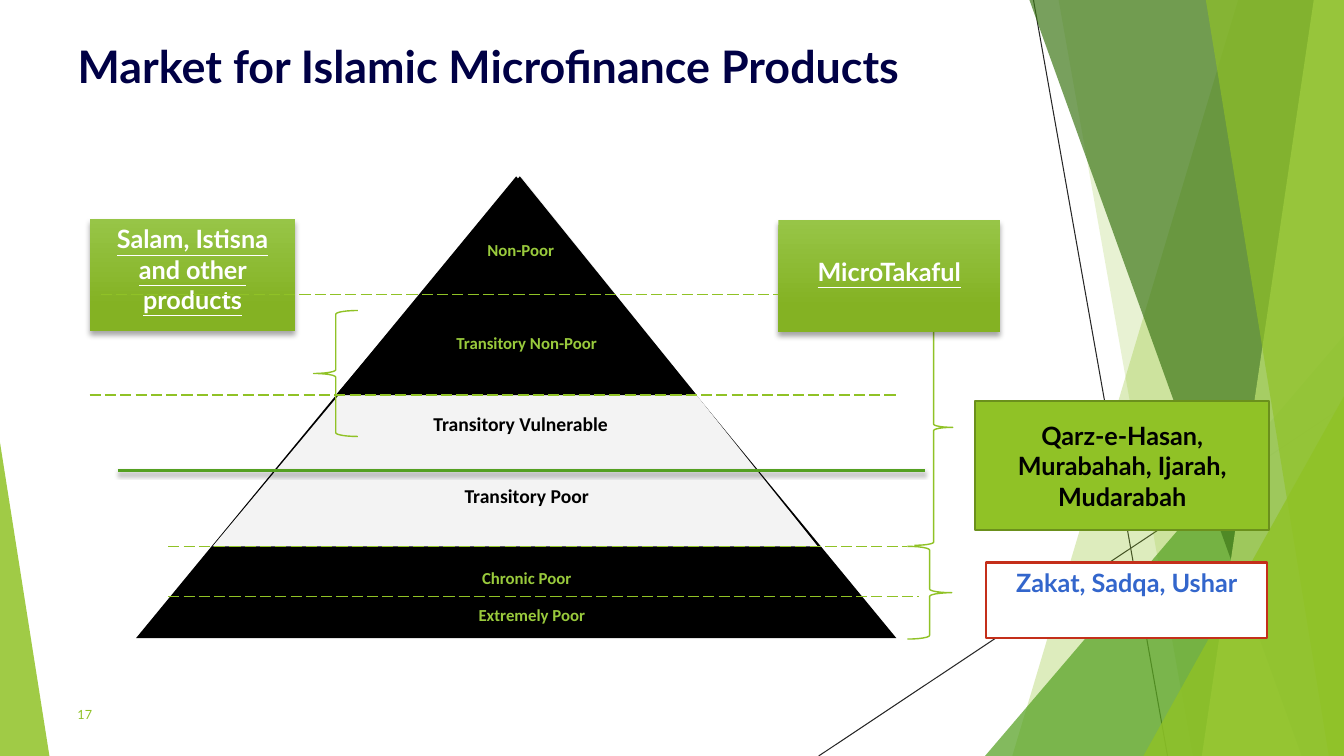
from pptx import Presentation
from pptx.dml.color import RGBColor
from pptx.enum.dml import MSO_LINE
from pptx.enum.shapes import MSO_CONNECTOR, MSO_SHAPE
from pptx.enum.text import MSO_ANCHOR, PP_ALIGN
from pptx.oxml import parse_xml
from pptx.oxml.ns import nsdecls
from pptx.util import Inches, Pt

TRIANGLE, BRACE, RECTANGLE = MSO_SHAPE.ISOSCELES_TRIANGLE, MSO_SHAPE.RIGHT_BRACE, MSO_SHAPE.RECTANGLE
STRAIGHT, LONG_DASH = MSO_CONNECTOR.STRAIGHT, MSO_LINE.LONG_DASH
TOP, MIDDLE = MSO_ANCHOR.TOP, MSO_ANCHOR.MIDDLE
LEFT, CENTER = PP_ALIGN.LEFT, PP_ALIGN.CENTER

BLACK = RGBColor(0x00, 0x00, 0x00)
WHITE = RGBColor(0xFF, 0xFF, 0xFF)
CHARCOAL = RGBColor(0x26, 0x26, 0x26)
PALE_GRAY = RGBColor(0xF3, 0xF3, 0xF3)
NAVY = RGBColor(0x00, 0x00, 0x45)
BLUE = RGBColor(0x33, 0x66, 0xCC)
RED = RGBColor(0xC4, 0x2F, 0x1A)
LIME = RGBColor(0x90, 0xC2, 0x26)
PALE_LIME = RGBColor(0xC0, 0xE4, 0x74)
LABEL_LIME = RGBColor(0x99, 0xCA, 0x3C)
OLIVE = RGBColor(0x6B, 0x90, 0x1C)
GREEN = RGBColor(0x54, 0xA0, 0x21)
FOREST = RGBColor(0x3F, 0x78, 0x19)
GRADIENT = [(0, RGBColor(0x97, 0xC5, 0x47)), (0.78, RGBColor(0x84, 0xB2, 0x23))]

WIDTH, HEIGHT = 13.33, 7.5


def write(box, text, formats, align=CENTER, anchor=TOP):
    frame = box.text_frame
    frame.word_wrap = True
    frame.vertical_anchor = anchor
    para = frame.paragraphs[0]
    para.alignment = align
    span = para.add_run()
    span.text = text
    span.font.color.rgb = formats["color"]
    for name in ("name", "size", "bold", "underline"):
        setattr(span.font, name, formats.get(name))


def set_shadow(item, blur=None, distance=None):
    effects = parse_xml(f"<a:effectLst {nsdecls('a')}/>")
    if blur:
        effects.append(parse_xml(
            f'<a:outerShdw {nsdecls("a")} blurRad="{Pt(blur)}" dist="{Pt(distance)}" dir="5400000" '
            'rotWithShape="0"><a:srgbClr val="000000"><a:alpha val="35000"/></a:srgbClr></a:outerShdw>'))
    item._element.spPr.append(effects)


deck = Presentation()
deck.slide_width, deck.slide_height = Inches(WIDTH), Inches(HEIGHT)
page = deck.slides.add_slide(deck.slide_layouts[5])
shapes = page.shapes

title = shapes.title
title.left, title.top, title.width, title.height = map(Inches, (0.67, 0.33, 12, 0.58))
write(title, "Market for Islamic Microfinance Products",
      {"name": "Lato", "size": Pt(32), "bold": True, "color": NAVY}, LEFT)

# Background facets
for x1, y1, x2, y2 in [(10.25, 0, 11.58, HEIGHT), (WIDTH, 4.03, 8.12, HEIGHT)]:
    ray = shapes.add_connector(STRAIGHT, *map(Inches, (x1, y1, x2, y2)))
    ray.line.color.rgb = CHARCOAL
    ray.line.width = Pt(0.75)
    set_shadow(ray)

# Bands give top and bottom x; triangles give left, top, width and apex
facets = [
    ((12.28, 10.04), LIME, 30),
    ((10.5, 11.83), LIME, 20),
    ((9.77, 3.33, 3.56, 1), GREEN, 72),
    ((10.21, 12.91), FOREST, 70),
    ((13.03, 11.92), PALE_LIME, 70),
    ((11.96, 13.18), LIME, 65),
    ((11.34, 3.93, 1.99, 1), LIME, 80),
    ((0, 4.39, 0.49, 0), LIME, 85),
]
for outline, color, opacity in facets:
    if len(outline) == 2:
        top_x, bottom_x = outline
        builder = shapes.build_freeform(Inches(top_x), 0)
        corners = [(WIDTH, 0), (WIDTH, HEIGHT), (bottom_x, HEIGHT)]
        builder.add_line_segments([(Inches(x), Inches(y)) for x, y in corners])
        facet = builder.convert_to_shape()
    else:
        left, top, width, apex = outline
        facet = shapes.add_shape(TRIANGLE, *map(Inches, (left, top, width, HEIGHT - top)))
        facet.adjustments[0] = apex
    facet.fill.solid()
    facet.fill.fore_color.rgb = color
    facet.line.fill.background()
    facet.shadow.inherit = False
    tint = facet._element.spPr.find(".//{*}solidFill/{*}srgbClr")
    tint.append(parse_xml(f'<a:alpha {nsdecls("a")} val="{opacity * 1000}"/>'))

# Pyramid
tiers = [
    (1.35, 7.54, 4.58, 0.5, BLACK),
    (2.11, 6, 3.67, 0.51, PALE_GRAY),
    (3.33, 3.58, 2.17, 0.51, BLACK),
]
for left, width, height, apex, color in tiers:
    tier = shapes.add_shape(TRIANGLE, *map(Inches, (left, 1.75, width, height)))
    tier.adjustments[0] = apex
    tier.fill.solid()
    tier.fill.fore_color.rgb = color
    tier.line.fill.background()
    tier.shadow.inherit = False

braces = [
    ((9.07, 3.07, 0.38, 2.34), 0),
    ((9, 5.42, 0.44, 0.92), 0),
    ((3.11, 3.08, 0.44, 1.25), 180),
]
for place, turn in braces:
    brace = shapes.add_shape(BRACE, *map(Inches, place))
    brace.rotation = turn
    brace.fill.background()
    brace.line.color.rgb = LIME
    brace.line.width = Pt(1)
    brace.shadow.inherit = False

# Product panels: those without an outline take the gradient
panels = [
    ((9.67, 3.98, 2.92, 1.28), "Qarz-e-Hasan, Murabahah, Ijarah, Mudarabah", LIME, OLIVE, BLACK, MIDDLE),
    ((9.78, 5.58, 2.79, 0.75), "Zakat, Sadqa, Ushar", WHITE, RED, BLUE, TOP),
    ((0.89, 2.17, 2.04, 1.11), "Salam, Istisna and other products", None, None, WHITE, TOP),
    ((7.72, 2.18, 2.2, 1.11), "MicroTakaful", None, None, WHITE, MIDDLE),
]
for place, text, color, outline, ink, anchor in panels:
    panel = shapes.add_shape(RECTANGLE, *map(Inches, place))
    if outline:
        panel.fill.solid()
        panel.fill.fore_color.rgb = color
        panel.line.color.rgb = outline
        panel.line.width = Pt(1.5)
        set_shadow(panel)
    else:
        panel.fill.gradient()
        panel.fill.gradient_angle = 270
        for stop, (position, shade) in zip(panel.fill.gradient_stops, GRADIENT):
            stop.position = position
            stop.color.rgb = shade
        panel.line.fill.background()
        set_shadow(panel, 4, 3)
    write(panel, text, {"name": "Lato", "size": Pt(18), "bold": True, "color": ink,
                        "underline": outline is None}, anchor=anchor)
panel.text_frame.margin_bottom = Inches(0.14)

# Tier boundaries
boundaries = [(1, 7.72, 2.92), (0.89, 8.89, 3.92), (1.67, 9, 5.42), (1.67, 9.11, 5.92)]
for start, end, y in boundaries:
    boundary = shapes.add_connector(STRAIGHT, *map(Inches, (start, y, end, y)))
    boundary.line.color.rgb = LIME
    boundary.line.width = Pt(1)
    boundary.line.dash_style = LONG_DASH
    set_shadow(boundary)

poverty_line = shapes.add_connector(STRAIGHT, *map(Inches, (1.17, 4.67, 9.17, 4.67)))
poverty_line.line.color.rgb = GREEN
poverty_line.line.width = Pt(2)
set_shadow(poverty_line, 3, 2)

labels = [
    ((4.33, 2.33, 1.67, 0.57), "Non-Poor", 12, LABEL_LIME),
    ((3.89, 3.25, 2.67, 0.3), "Transitory Non-Poor", 12, LABEL_LIME),
    ((3, 4.04, 4.33, 0.34), "Transitory Vulnerable", 14, BLACK),
    ((2, 4.75, 6.45, 0.34), "Transitory Poor", 14, BLACK),
    ((1.56, 5.58, 7.33, 0.3), "Chronic Poor", 12, LABEL_LIME),
    ((2.33, 5.95, 5.89, 0.3), "Extremely Poor", 12, LABEL_LIME),
]
for place, text, size, color in labels:
    label = shapes.add_textbox(*map(Inches, place))
    write(label, text, {"name": "Calibri", "size": Pt(size), "bold": True, "color": color})

number = shapes.add_textbox(*map(Inches, (0.67, 6.83, 3.11, 0.52)))
write(number, "17", {"name": "Lato", "size": Pt(9), "color": LIME}, LEFT, MIDDLE)

deck.save("out.pptx")
